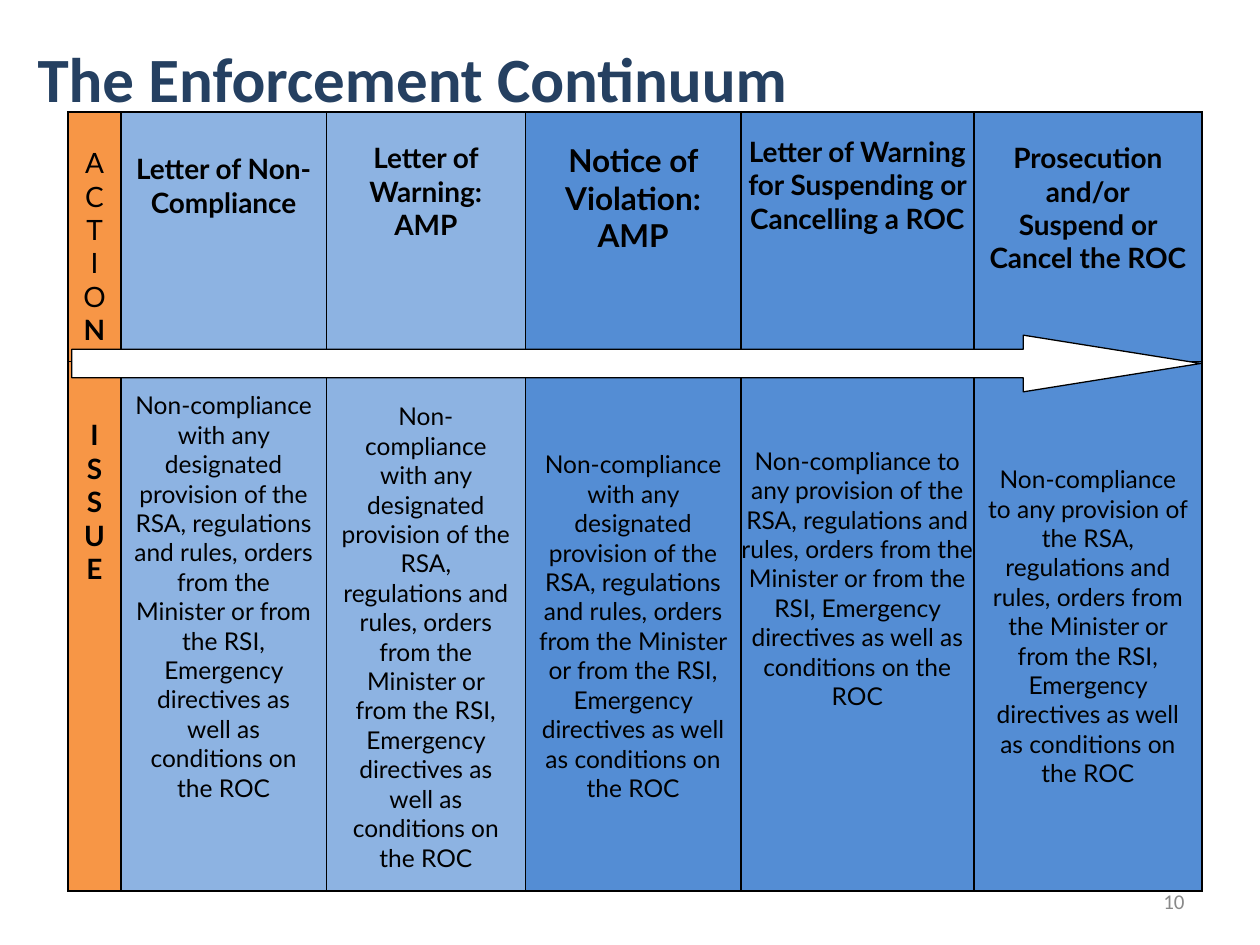
from dataclasses import dataclass

from pptx import Presentation
from pptx.dml.color import RGBColor
from pptx.enum.shapes import MSO_SHAPE
from pptx.enum.text import MSO_ANCHOR, PP_ALIGN
from pptx.oxml import parse_xml
from pptx.oxml.ns import nsdecls
from pptx.util import Inches, Pt

ORANGE, LIGHT, DEEP = "F79646", "8DB3E2", "548DD4"
COLS = [0.42, 1.63, 1.58, 1.71, 1.85, 1.81]
ROWS = [1.98, 4.2]
FILLS = [ORANGE, LIGHT, LIGHT, DEEP, DEEP, DEEP]
TAIL = (
    "provision of the RSA, regulations and rules, orders from the Minister "
    "or from the RSI, Emergency directives as well as conditions on the ROC"
)
SOME = f"Non-compliance with any designated {TAIL}"
EVERY = f"Non-compliance to any {TAIL}"


@dataclass
class Entry:
    text: str
    top: float
    size: float = 16
    light: int = 0
    side: float = 0.1
    foot: float = 0.05
    middle: bool = False


HEADS = [
    Entry("\n".join("ACTION"), 0.27, light=5, side=0, foot=0),
    Entry("Letter of Non-Compliance", 0.32),
    Entry("Letter of Warning:\nAMP", 0.23),
    Entry("Notice of Violation:\nAMP", 0.23, size=18),
    Entry("Letter of Warning for Suspending or Cancelling a ROC", 0.18, side=0, foot=0),
    Entry("Prosecution\nand/or\nSuspend or Cancel the ROC", 0.23),
]
ISSUES = [
    Entry("\n".join("ISSUE"), 0.45, side=0, foot=0),
    Entry(SOME, 0.23, size=14, light=1),
    Entry(SOME, 0.22, size=14, light=1, middle=True),
    Entry(SOME, 0.05, size=14, light=1, middle=True),
    Entry(EVERY, 0.67, size=14, light=1, side=0, foot=0),
    Entry(EVERY, 0.05, size=14, light=1, middle=True),
]


def color(code: str) -> RGBColor:
    return RGBColor.from_string(code)


def write(frame, text: str, *, size: float, font: str = "Lato", ink: str = "000000",
          light: int = 0, align=PP_ALIGN.CENTER) -> None:
    frame.word_wrap = True
    for i, line in enumerate(text.split("\n")):
        para = frame.paragraphs[0] if i == 0 else frame.add_paragraph()
        para.alignment = align
        run = para.add_run()
        run.text = line
        run.font.size = Pt(size)
        run.font.name = font
        run.font.bold = i >= light
        run.font.color.rgb = color(ink)


def edge(cell) -> None:
    props = cell._tc.get_or_add_tcPr()
    for side in ("lnL", "lnR", "lnT", "lnB"):
        props.append(parse_xml(
            f'<a:{side} {nsdecls("a")} w="{Pt(1)}"><a:solidFill>'
            f'<a:srgbClr val="000000"/></a:solidFill></a:{side}>'
        ))


def draw_cell(cell, entry: Entry, fill: str) -> None:
    edge(cell)
    cell.fill.solid()
    cell.fill.fore_color.rgb = color(fill)
    cell.margin_left = cell.margin_right = Inches(entry.side)
    cell.margin_top = Inches(entry.top)
    cell.margin_bottom = Inches(entry.foot)
    cell.vertical_anchor = MSO_ANCHOR.MIDDLE if entry.middle else MSO_ANCHOR.TOP
    write(cell.text_frame, entry.text, size=entry.size, light=entry.light)


def draw_grid(slide) -> None:
    table = slide.shapes.add_table(
        len(ROWS), len(COLS), Inches(0.54), Inches(0.89),
        Inches(sum(COLS)), Inches(sum(ROWS)),
    ).table
    table.first_row = table.horz_banding = False
    for col, width in zip(table.columns, COLS):
        col.width = Inches(width)
    for row, height, group in zip(table.rows, ROWS, (HEADS, ISSUES)):
        row.height = Inches(height)
        for cell, entry, fill in zip(row.cells, group, FILLS):
            draw_cell(cell, entry, fill)


def draw_arrow(slide) -> None:
    arrow = slide.shapes.add_shape(
        MSO_SHAPE.RIGHT_ARROW, Inches(0.57), Inches(2.66), Inches(8.96), Inches(0.45)
    )
    arrow.adjustments[0] = 0.5
    arrow.adjustments[1] = 3.13
    arrow.shadow.inherit = False
    arrow.fill.solid()
    arrow.fill.fore_color.rgb = color("FFFFFF")
    arrow.line.color.rgb = color("000000")
    arrow.line.width = Pt(0.75)


def main() -> None:
    deck = Presentation()
    deck.slide_width, deck.slide_height = Inches(10), Inches(7.5)
    slide = deck.slides.add_slide(deck.slide_layouts[6])

    number = slide.shapes.add_textbox(
        Inches(7.17), Inches(6.95), Inches(2.33), Inches(0.4)
    ).text_frame
    number.vertical_anchor = MSO_ANCHOR.MIDDLE
    write(number, "10", size=12, font="Calibri", ink="898989", light=1,
          align=PP_ALIGN.RIGHT)

    draw_grid(slide)
    draw_arrow(slide)

    title = slide.shapes.add_textbox(
        Inches(0.2), Inches(-0.21), Inches(9), Inches(1.1)
    ).text_frame
    title.margin_top = Inches(0.52)
    write(title, "The Enforcement Continuum", size=36, font="Calibri", ink="254061",
          align=PP_ALIGN.LEFT)

    deck.save("out.pptx")


if __name__ == "__main__":
    main()
